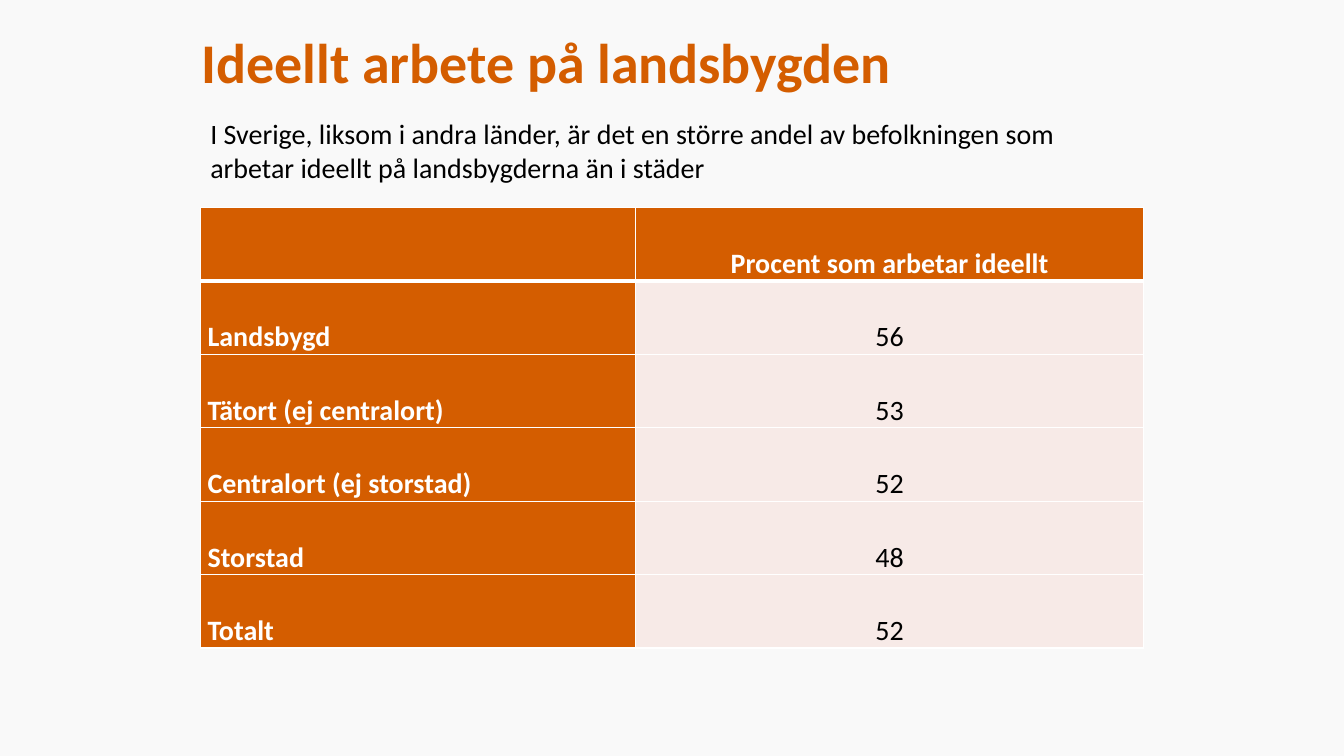
from lxml import etree
from pptx import Presentation
from pptx.dml.color import RGBColor
from pptx.enum.text import MSO_ANCHOR as Anchor, MSO_AUTO_SIZE as AutoSize, PP_ALIGN as Align
from pptx.oxml.ns import qn
from pptx.util import Cm, Pt

TITLE = "Ideellt arbete på landsbygden"
INTRO = ("I Sverige, liksom i andra länder, är det en större andel av befolkningen "
         "som arbetar ideellt på landsbygderna än i städer")
ROWS = [
    ("", "Procent som arbetar ideellt"),
    ("Landsbygd", "56"),
    ("Tätort (ej centralort)", "53"),
    ("Centralort (ej storstad)", "52"),
    ("Storstad", "48"),
    ("Totalt", "52"),
]

ORANGE, PINK, WHITE, BLACK, BACKDROP = "D45D00", "F7EAE7", "FFFFFF", "000000", "F9F9F9"
LEFT = 5.05
COLUMN_WIDTHS = (10.97, 12.8)
ROW_HEIGHT = 1.85
TABLE_TOP = 5.23
TABLE_WIDTH = sum(COLUMN_WIDTHS)


def color(value):
    return RGBColor.from_string(value)


def write(frame, text, size=20, ink=BLACK, bold=False, align=Align.LEFT, spacing=1.0):
    para = frame.paragraphs[0]
    para.alignment = align
    para.line_spacing = spacing
    para.font.size = Pt(size)
    if text:
        span = para.add_run()
        span.text = text
        span.font.name = "Calibri"
        span.font.size = Pt(size)
        span.font.bold = bold
        span.font.color.rgb = color(ink)


def set_borders(cell, widths):
    """Draw white cell edges; the border elements must precede the fill."""
    properties = cell._tc.get_or_add_tcPr()
    for index, (side, width) in enumerate(widths.items()):
        line = etree.Element(qn(f"a:ln{side}"), w=str(Pt(width)))
        fill = etree.SubElement(line, qn("a:solidFill"))
        etree.SubElement(fill, qn("a:srgbClr"), val=WHITE)
        properties.insert(index, line)


def add_title(page):
    title = page.shapes.title
    title.left, title.top, title.width, title.height = Cm(4.83), Cm(0.46), Cm(23.34), Cm(2.08)
    frame = title.text_frame
    frame.auto_size = AutoSize.NONE
    frame.vertical_anchor = Anchor.BOTTOM
    write(frame, TITLE, size=40, ink=ORANGE, bold=True, spacing=0.9)


def add_table(page):
    table = page.shapes.add_table(
        len(ROWS), len(COLUMN_WIDTHS), Cm(LEFT), Cm(TABLE_TOP),
        Cm(TABLE_WIDTH), Cm(ROW_HEIGHT * len(ROWS))).table
    for column, width in zip(table.columns, COLUMN_WIDTHS):
        column.width = Cm(width)
    for r, texts in enumerate(ROWS):
        table.rows[r].height = Cm(ROW_HEIGHT)
        for c, text in enumerate(texts):
            cell = table.cell(r, c)
            heading = r == 0 or c == 0
            cell.fill.solid()
            cell.fill.fore_color.rgb = color(ORANGE if heading else PINK)
            cell.vertical_anchor = Anchor.BOTTOM
            cell.margin_left = cell.margin_right = Cm(0.18)
            cell.margin_top = cell.margin_bottom = 0
            write(cell.text_frame, text, ink=WHITE if heading else BLACK, bold=heading,
                  align=Align.CENTER if c else Align.LEFT, spacing=1.04)
            # The rule under the header row is heavier
            set_borders(cell, {"L": 1, "R": 1, "T": 3 if r == 1 else 1, "B": 3 if r == 0 else 1})


def add_intro(page):
    box = page.shapes.add_textbox(Cm(LEFT), Cm(2.82), Cm(TABLE_WIDTH), Cm(1.96))
    box.text_frame.word_wrap = True
    write(box.text_frame, INTRO)


def main():
    deck = Presentation()
    deck.slide_width, deck.slide_height = Cm(33.87), Cm(19.05)
    page = deck.slides.add_slide(deck.slide_layouts[5])
    page.background.fill.solid()
    page.background.fill.fore_color.rgb = color(BACKDROP)
    add_title(page)
    add_table(page)
    add_intro(page)
    deck.save("out.pptx")


if __name__ == "__main__":
    main()
